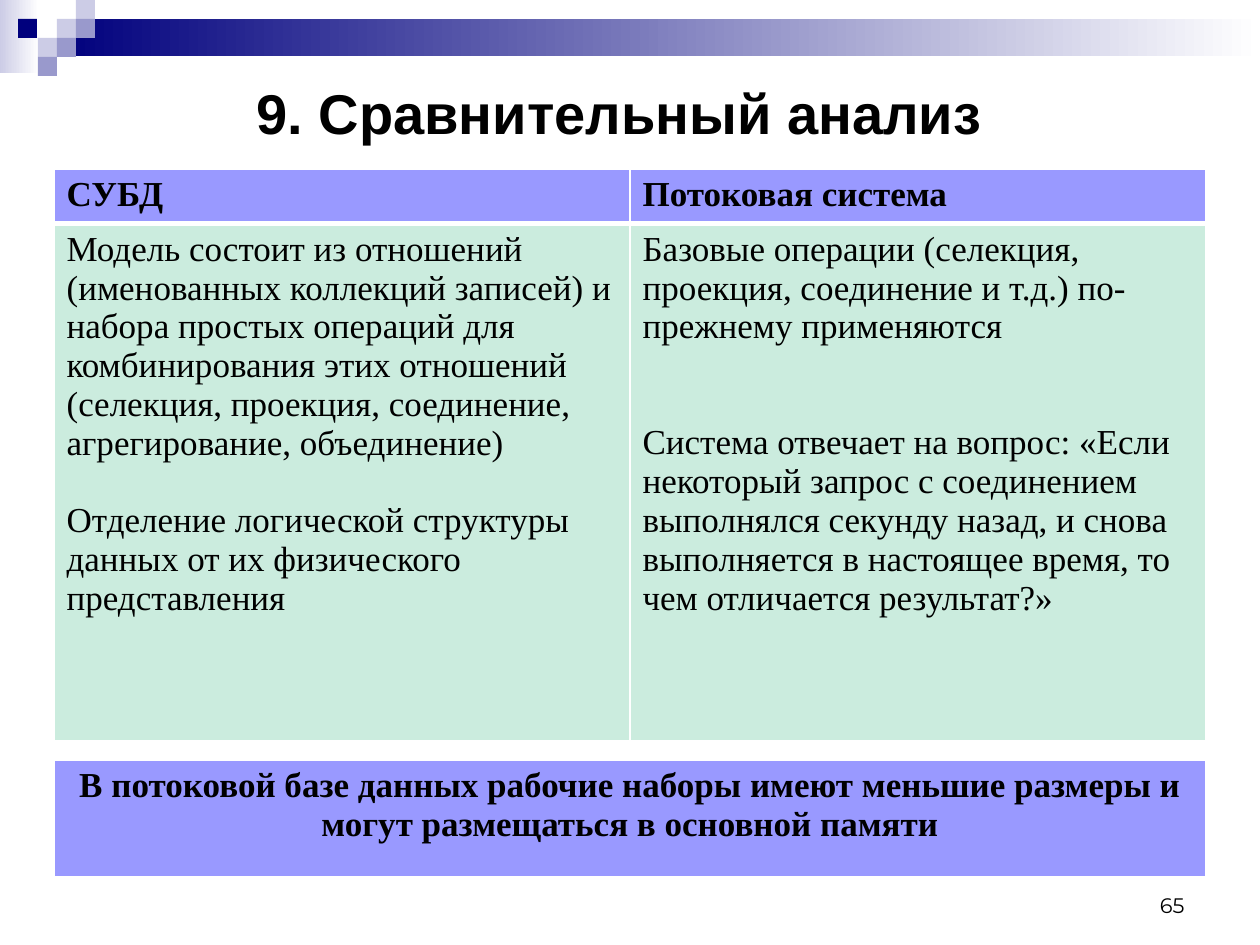
"""Build the slide that compares a DBMS with a streaming system."""
from lxml import etree
from pptx import Presentation
from pptx import util as u
from pptx.dml.color import RGBColor
from pptx.enum import shapes, text
from pptx.oxml.ns import qn

SCALE = 914400 / 126
SERIF = "Times New Roman"
COLOURS = {
    "ink": "000000", "white": "FFFFFF", "navy": "00007D", "mist": "CCCCE6",
    "slate": "9999CC", "header": "9999FF", "body": "CBECDE",
}
TILES = [
    (57, 19, "mist"), (76, 0, "mist"), (76, 19, "slate"), (38, 38, "mist"),
    (18, 19, "navy"), (57, 38, "slate"), (38, 57, "slate"),
]
HEADERS = ["СУБД", "Потоковая система"]
BODIES = [
    (22, [
        "Модель состоит из отношений (именованных коллекций записей) и набора "
        "простых операций для комбинирования этих отношений (селекция, проекция, "
        "соединение, агрегирование, объединение)",
        "Отделение логической структуры данных от их физического представления",
    ]),
    (44, [
        "Базовые операции (селекция, проекция, соединение и т.д.) "
        "по-прежнему применяются",
        "Система отвечает на вопрос: «Если некоторый запрос с соединением "
        "выполнялся секунду назад, и снова выполняется в настоящее время, "
        "то чем отличается результат?»",
    ]),
]
SUMMARY = ("В потоковой базе данных рабочие наборы имеют меньшие размеры "
           "и могут размещаться в основной памяти")


def px(*lengths):
    return [u.Emu(round(length * SCALE)) for length in lengths]


def rgb(name):
    return RGBColor.from_string(COLOURS[name])


def add_block(page, at, *colours):
    block = page.shapes.add_shape(shapes.MSO_SHAPE.RECTANGLE, *px(*at))
    block.shadow.inherit = False
    block.line.fill.background()
    if len(colours) == 1:
        block.fill.solid()
        block.fill.fore_color.rgb = rgb(colours[0])
        return
    block.fill.gradient()
    block.fill.gradient_angle = 0
    for stop, colour in zip(block.fill.gradient_stops, colours):
        stop.color.rgb = rgb(colour)


def write(frame, paragraphs, size, font, bold=False, align="LEFT", gap=0):
    for index, words in enumerate(paragraphs):
        para = frame.add_paragraph() if index else frame.paragraphs[0]
        para.alignment = text.PP_ALIGN[align]
        if index:
            para.space_before = u.Pt(gap)
        span = para.add_run()
        span.text = words
        span.font.size = u.Pt(size)
        span.font.name = font
        span.font.bold = bold
        span.font.color.rgb = rgb("ink")


def add_label(page, at, words, size, font, anchor, align, bold=False):
    frame = page.shapes.add_textbox(*px(*at)).text_frame
    frame.word_wrap = True
    frame.vertical_anchor = text.MSO_ANCHOR[anchor]
    write(frame, [words], size, font, bold, align)


def add_grid(page, at, heights, columns):
    table = page.shapes.add_table(len(heights), columns, *px(*at)).table
    table.first_row = table.horz_banding = False
    for row, height in zip(table.rows, px(*heights)):
        row.height = height
    return table


def style_cell(cell, fill, top=1, bottom=1):
    properties = cell._tc.get_or_add_tcPr()
    for side, width in zip("LRTB", (1, 1, top, bottom)):
        line = etree.SubElement(properties, qn(f"a:ln{side}"), w=str(u.Pt(width)))
        solid = etree.SubElement(line, qn("a:solidFill"))
        etree.SubElement(solid, qn("a:srgbClr"), val=COLOURS["white"])
    cell.fill.solid()
    cell.fill.fore_color.rgb = rgb(fill)


def add_comparison(page):
    table = add_grid(page, (54, 169, 1152, 571), (54, 517), 2)
    for column, (header, (gap, paragraphs)) in enumerate(zip(HEADERS, BODIES)):
        head, body = table.cell(0, column), table.cell(1, column)
        style_cell(head, "header", bottom=3)
        write(head.text_frame, [header], 20, SERIF, bold=True)
        style_cell(body, "body", top=3)
        write(body.text_frame, paragraphs, 20, SERIF, gap=gap)


def add_summary(page):
    cell = add_grid(page, (54, 760, 1152, 118), (118,), 1).cell(0, 0)
    style_cell(cell, "header", bottom=3)
    write(cell.text_frame, [SUMMARY], 20, SERIF, bold=True, align="CENTER")


def main():
    deck = Presentation()
    deck.slide_width, deck.slide_height = px(1260, 945)
    page = deck.slides.add_slide(deck.slide_layouts[6])
    add_block(page, (0, 0, 39, 73), "mist", "white")
    add_block(page, (57, 19, 1203, 37), "navy", "white")
    for left, top, colour in TILES:
        add_block(page, (left, top, 19, 19), colour)
    add_label(page, (84, 60, 1071, 105), "9. Сравнительный анализ", 32, "Arial",
              "MIDDLE", "CENTER", bold=True)
    add_comparison(page)
    add_summary(page)
    add_label(page, (903, 861, 294, 63), "65", 12, "Montserrat", "BOTTOM", "RIGHT")
    deck.save("out.pptx")


if __name__ == "__main__":
    main()
